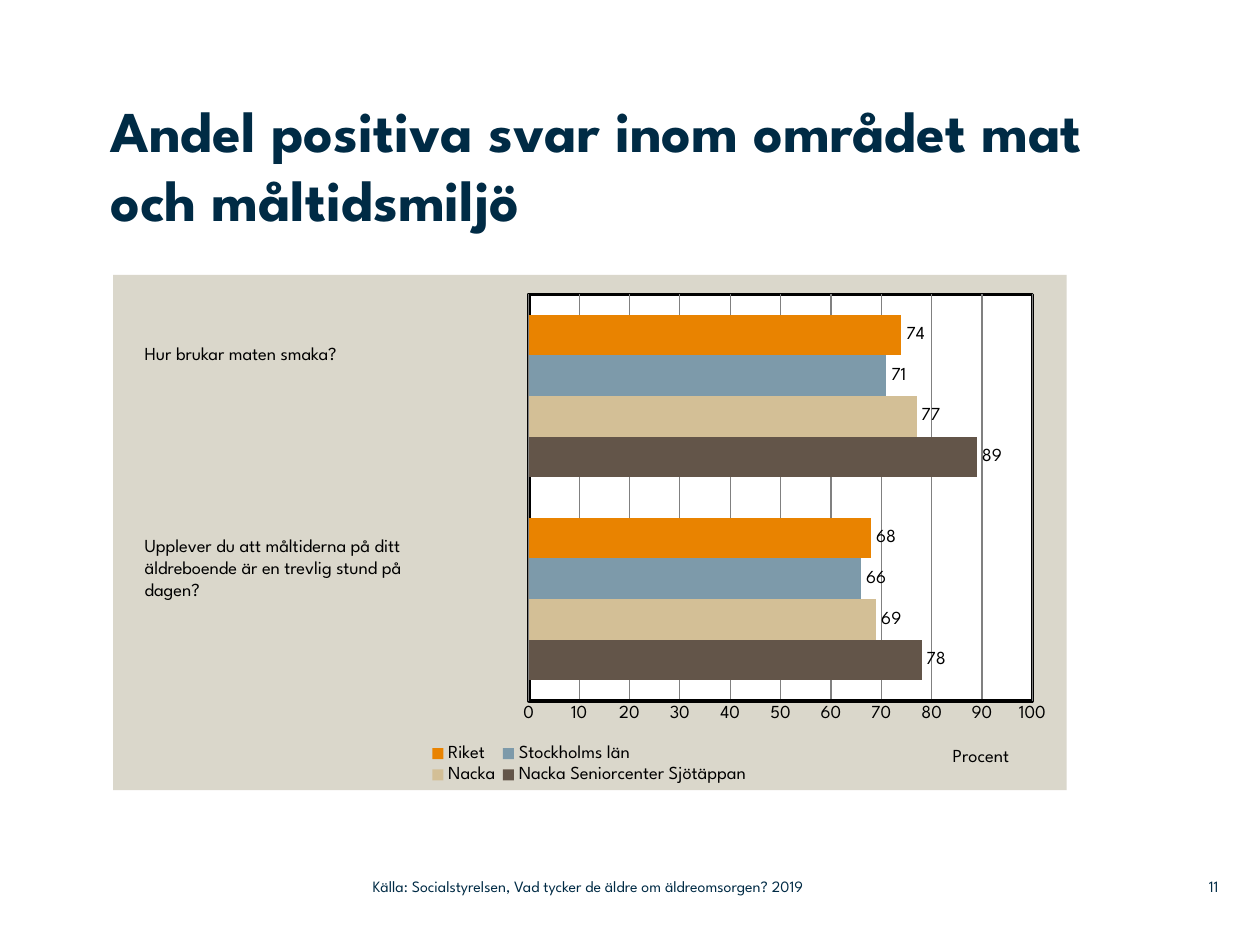
from lxml.etree import SubElement
from pptx import Presentation
from pptx.chart.data import CategoryChartData
from pptx.dml.color import RGBColor
from pptx.enum.chart import (XL_CHART_TYPE, XL_LABEL_POSITION,
                             XL_LEGEND_POSITION, XL_TICK_MARK)
from pptx.enum.text import MSO_ANCHOR, MSO_AUTO_SIZE, PP_ALIGN
from pptx.oxml import parse_xml
from pptx.oxml.ns import nsdecls, qn
from pptx.util import Pt

FACE = "League Spartan"
NAVY = RGBColor(0x00, 0x2B, 0x45)
BLACK = RGBColor(0x00, 0x00, 0x00)
WHITE = RGBColor(0xFF, 0xFF, 0xFF)
GREY = RGBColor(0x80, 0x80, 0x80)
SAND = RGBColor(0xDA, 0xD7, 0xCB)
BROWN = RGBColor(0x63, 0x55, 0x49)
TAN = RGBColor(0xD3, 0xBF, 0x96)
BLUE = RGBColor(0x7D, 0x9A, 0xAA)
ORANGE = RGBColor(0xE9, 0x83, 0x00)
SERIES = [
    ("Nacka Seniorcenter Sjötäppan", (78, 89), BROWN),
    ("Nacka", (69, 77), TAN),
    ("Stockholms län", (66, 71), BLUE),
    ("Riket", (68, 74), ORANGE),
]


def style(font, size, color, bold=False):
    """Set face, size, colour and weight of a font."""
    font.name, font.size, font.bold = FACE, Pt(size), bold
    font.color.rgb = color


def layout(parent, index, **parts):
    """Give a chart part a manual layout as child number index."""
    for old in parent.findall(qn("c:layout")):
        parent.remove(old)
    node = parse_xml(f"<c:layout {nsdecls('c')}><c:manualLayout/></c:layout>")
    for tag, val in parts.items():
        SubElement(node[0], qn(f"c:{tag}")).set("val", str(val))
    parent.insert(index, node)


def paint(fill, line=None):
    """Return chart shape properties with a fill and an optional line."""
    edge = f'<a:solidFill><a:srgbClr val="{line}"/></a:solidFill>' if line else "<a:noFill/>"
    return parse_xml(
        f'<c:spPr {nsdecls("c", "a")}><a:solidFill><a:srgbClr val="{fill}"/>'
        f'</a:solidFill><a:ln w="{Pt(2)}">{edge}</a:ln></c:spPr>')


def add_title(slide, box):
    """Move and format the title placeholder."""
    title = slide.shapes.title
    title.left, title.top, title.width, title.height = map(Pt, box)
    frame = title.text_frame
    frame.text = "Andel positiva svar inom området mat och måltidsmiljö"
    frame.auto_size = MSO_AUTO_SIZE.NONE
    frame.word_wrap = True
    frame.vertical_anchor = MSO_ANCHOR.TOP
    frame.margin_left = frame.margin_top = frame.margin_right = frame.margin_bottom = 0
    para = frame.paragraphs[0]
    para.alignment = PP_ALIGN.LEFT
    style(para.runs[0].font, 33, NAVY, True)


def add_axes(chart):
    """Format the value axis and hide the category axis."""
    chart.category_axis.visible = False
    axis = chart.value_axis
    axis.minimum_scale, axis.maximum_scale, axis.major_unit = 0, 100, 10
    axis.major_tick_mark = axis.minor_tick_mark = XL_TICK_MARK.NONE
    axis.format.line.color.rgb = BLACK
    axis.format.line.width = Pt(2)
    axis.major_gridlines.format.line.color.rgb = GREY
    axis.major_gridlines.format.line.width = Pt(0.75)
    style(axis.tick_labels.font, 10.5, BLACK)
    name = axis.axis_title
    name.text_frame.text = "Procent"
    style(name.text_frame.paragraphs[0].runs[0].font, 10.5, BLACK)
    layout(name._element, 1, xMode="edge", yMode="edge", x=0.877, y=0.91)


def add_bars(slide, box):
    """Draw the clustered bar chart with its legend."""
    data = CategoryChartData()
    data.categories = ["1", "2"]
    for name, vals, _ in SERIES:
        data.add_series(name, vals)
    chart = slide.shapes.add_chart(
        XL_CHART_TYPE.BAR_CLUSTERED, *map(Pt, box), data).chart
    style(chart.font, 10.5, BLACK)
    chart.has_title = False
    plot = chart.plots[0]
    plot.gap_width, plot.overlap, plot.vary_by_categories = 100, 0, False
    for item, (_, _, color) in zip(plot.series, SERIES):
        item.format.fill.solid()
        item.format.fill.fore_color.rgb = color
        labels = item.data_labels
        labels.show_value = True
        labels.position = XL_LABEL_POSITION.OUTSIDE_END
        style(labels.font, 10.5, BLACK)
    add_axes(chart)
    chart.has_legend = True
    legend = chart.legend
    legend.position = XL_LEGEND_POSITION.BOTTOM
    legend.include_in_layout = False
    style(legend.font, 10.5, BLACK)
    layout(legend._element, 1, xMode="edge", yMode="edge",
           x=0.327, y=0.905, w=0.345, h=0.09)
    root = chart._chartSpace
    area = root.chart.plotArea
    layout(area, 0, layoutTarget="inner", xMode="edge", yMode="edge",
           x=0.436, y=0.038, w=0.528, h=0.789)
    area.append(paint(WHITE, BLACK))
    root.chart.addnext(paint(SAND))


def add_text(slide, box, text, size=10.5, color=BLACK):
    """Place a wrapped text box and return its frame."""
    frame = slide.shapes.add_textbox(*map(Pt, box)).text_frame
    frame.word_wrap = True
    frame.text = text
    for para in frame.paragraphs:
        style(para.runs[0].font, size, color)
    return frame


def add_foot(slide, box, text, align=PP_ALIGN.LEFT):
    """Place a footer text, centred upright without margins."""
    frame = add_text(slide, box, text, 9, NAVY)
    frame.margin_left = frame.margin_top = frame.margin_right = frame.margin_bottom = 0
    frame.vertical_anchor = MSO_ANCHOR.MIDDLE
    frame.paragraphs[0].alignment = align


def main():
    """Build and save the slide."""
    deck = Presentation()
    deck.slide_width, deck.slide_height = Pt(720), Pt(540)
    slide = deck.slides.add_slide(deck.slide_layouts[5])
    add_title(slide, (63, 54, 606, 102))
    add_bars(slide, (64.6, 157, 545, 294.5))
    add_text(slide, (75.6, 192.2, 214, 20), "Hur brukar maten smaka?")
    add_text(slide, (75.6, 301.7, 211, 45.4),
             "Upplever du att måltiderna på ditt äldreboende är en trevlig stund på\ndagen?")
    add_foot(slide, (662.4, 496, 33.8, 21), "11", PP_ALIGN.RIGHT)
    add_foot(slide, (213, 496, 319, 21),
             "Källa: Socialstyrelsen, Vad tycker de äldre om äldreomsorgen? 2019")
    deck.save("out.pptx")


if __name__ == "__main__":
    main()
